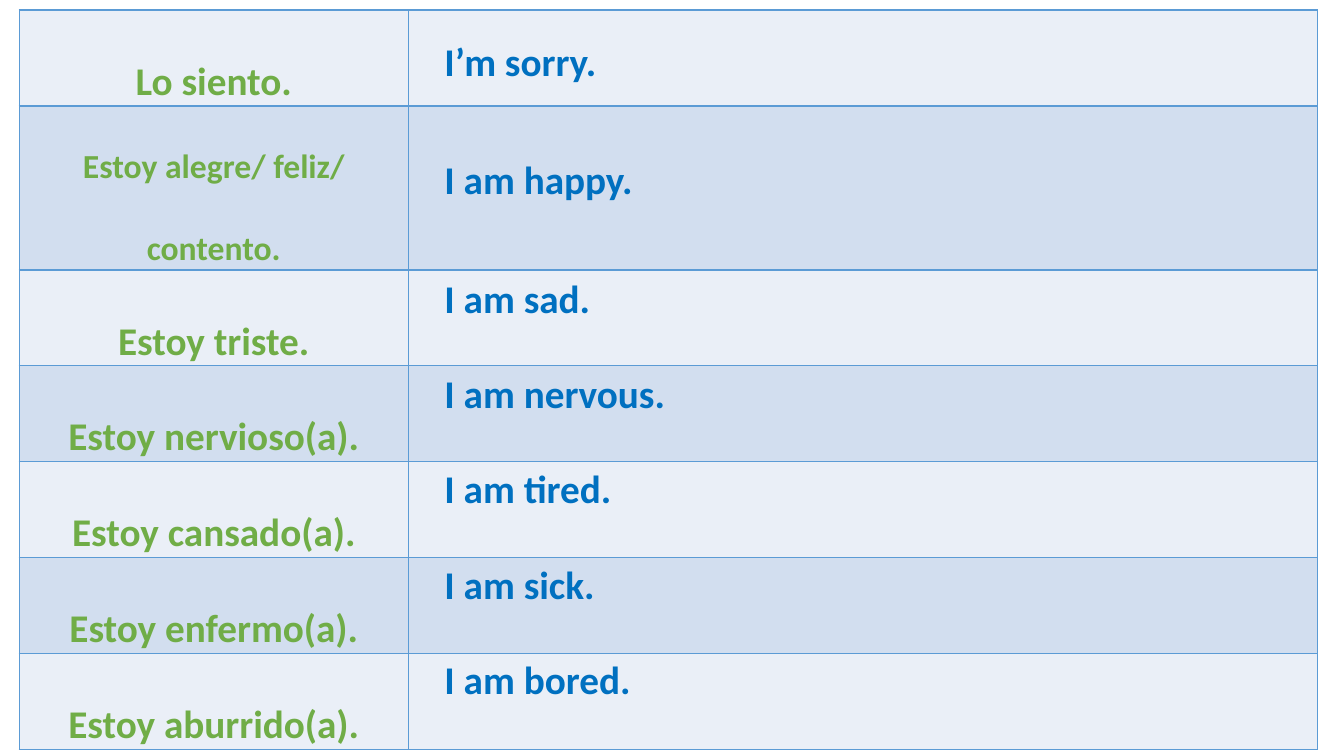
import pptx
import pptx.dml.color
import pptx.enum.text
import pptx.oxml
import pptx.oxml.ns
import pptx.util

PX = 9144  # 100 px to the inch


class Theme:
    font = "Calibri"
    spanish = "70AD47"
    english = "0070C0"
    bands = ("EAEFF7", "D2DEEF")
    border = "5B9BD5"
    border_pt = 1
    size = 28
    small = 24


# Spanish phrase, its type size, row height, English phrase, its top
PHRASES = [
    ("Lo siento.", Theme.size, 93, "I’m sorry.", 32),
    ("Estoy alegre/ feliz/ contento.", Theme.small, 153, "I am happy.", 149),
    ("Estoy triste.", Theme.size, 93, "I am sad.", 267),
    ("Estoy nervioso(a).", Theme.size, 93, "I am nervous.", 361),
    ("Estoy cansado(a).", Theme.size, 93, "I am tired.", 456),
    ("Estoy enfermo(a).", Theme.size, 93, "I am sick.", 551),
    ("Estoy aburrido(a).", Theme.size, 93, "I am bored.", 645),
]


def px(n):
    return pptx.util.Emu(n * PX)


def rgb(color):
    return pptx.dml.color.RGBColor.from_string(color)


def write(tf, text, *, color, size=Theme.size, align=None, spacing=None):
    tf.word_wrap = True
    p = tf.paragraphs[0]
    p.alignment = align
    p.line_spacing = spacing
    r = p.add_run()
    r.text = text
    r.font.name = Theme.font
    r.font.size = pptx.util.Pt(size)
    r.font.bold = True
    r.font.color.rgb = rgb(color)


class Deck:
    def __init__(self, theme, width, height):
        self.theme = theme
        self.prs = pptx.Presentation()
        self.prs.slide_width, self.prs.slide_height = px(width), px(height)
        self.s = self.prs.slides.add_slide(self.prs.slide_layouts[6])

    def style_cell(self, cell, fill):
        """Give a cell its four borders, then its fill, as the schema orders them."""
        tcPr = cell._tc.get_or_add_tcPr()
        width = pptx.util.Pt(self.theme.border_pt)
        for side in "LRTB":
            tcPr.append(pptx.oxml.parse_xml(
                f'<a:ln{side} {pptx.oxml.ns.nsdecls("a")} w="{width}"><a:solidFill>'
                f'<a:srgbClr val="{self.theme.border}"/></a:solidFill></a:ln{side}>'))
        cell.fill.solid()
        cell.fill.fore_color.rgb = rgb(fill)

    def table(self, x, y, col_widths, row_heights):
        frame = self.s.shapes.add_table(
            len(row_heights), len(col_widths), px(x), px(y),
            px(sum(col_widths)), px(sum(row_heights)))
        table = frame.table
        table.first_row = table.horz_banding = False
        for column, width in zip(table.columns, col_widths):
            column.width = px(width)
        for i, (row, height) in enumerate(zip(table.rows, row_heights)):
            row.height = px(height)
            for cell in row.cells:
                self.style_cell(cell, self.theme.bands[i % 2])
        return table

    def cell_text(self, cell, text, **fmt):
        cell.margin_left = cell.margin_right = px(7)
        cell.margin_top = cell.margin_bottom = 0
        write(cell.text_frame, text, **fmt)

    def text(self, x, y, w, h, text, **fmt):
        tf = self.s.shapes.add_textbox(px(x), px(y), px(w), px(h)).text_frame
        tf.auto_size = pptx.enum.text.MSO_AUTO_SIZE.SHAPE_TO_FIT_TEXT
        write(tf, text, **fmt)


def main():
    deck = Deck(Theme, 1333, 750)
    table = deck.table(19, 10, [386, 902], [phrase[2] for phrase in PHRASES])
    for i, (spanish, size, _, english, top) in enumerate(PHRASES):
        deck.cell_text(table.cell(i, 0), spanish, color=Theme.spanish, size=size,
                       align=pptx.enum.text.PP_ALIGN.CENTER, spacing=2.0)
        deck.text(431, top, 806, 57, english, color=Theme.english)
    deck.prs.save("out.pptx")


if __name__ == "__main__":
    main()
